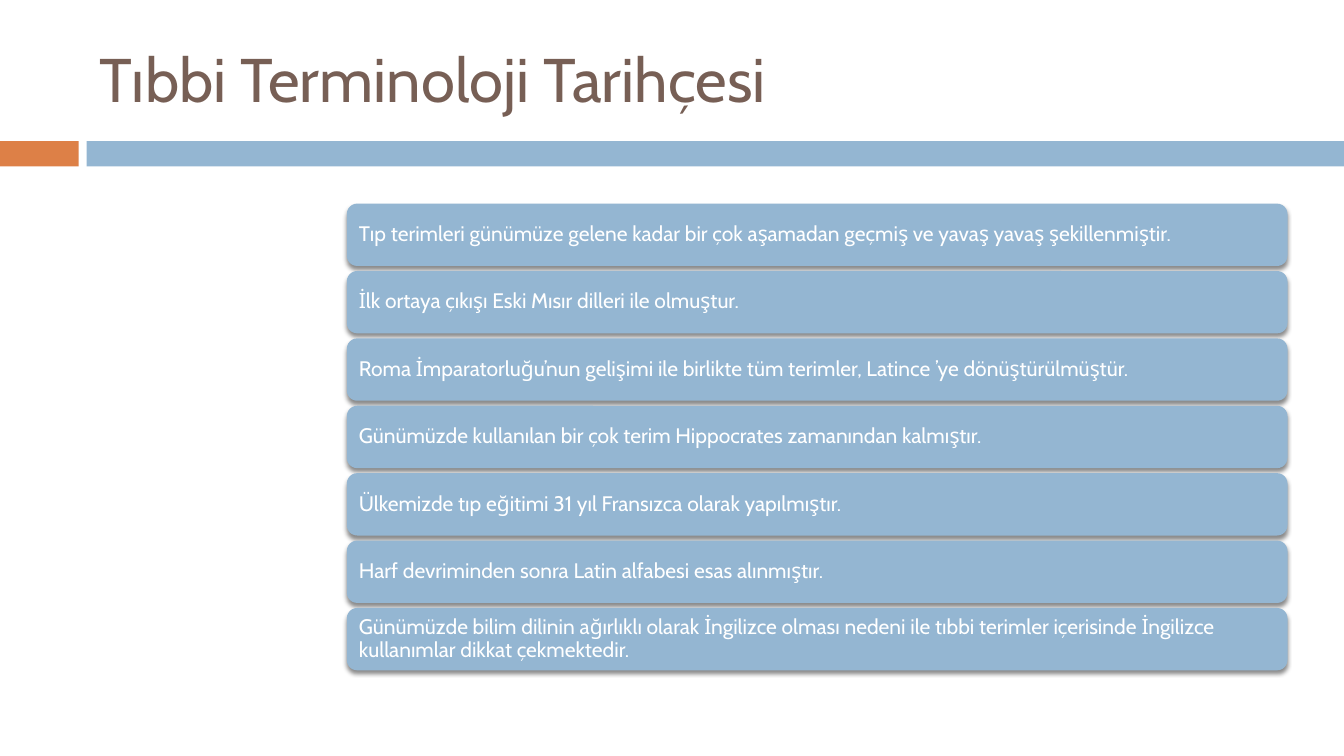
import pptx
import pptx.dml.color
import pptx.enum.shapes
import pptx.enum.text
import pptx.oxml
import pptx.oxml.ns
import pptx.util

Inches = pptx.util.Inches
Pt = pptx.util.Pt
SHAPE = pptx.enum.shapes.MSO_SHAPE
COLORS = {"orange": "DD8047", "blue": "94B6D2", "brown": "775F55",
          "white": "FFFFFF", "shadow": "000000"}
TITLE = "Tıbbi Terminoloji Tarihçesi"
HISTORY = [
    "Tıp terimleri günümüze gelene kadar bir çok aşamadan geçmiş ve yavaş yavaş şekillenmiştir.",
    "İlk ortaya çıkışı Eski Mısır dilleri ile olmuştur.",
    "Roma İmparatorluğu’nun gelişimi ile birlikte tüm terimler, Latince ’ye dönüştürülmüştür.",
    "Günümüzde kullanılan bir çok terim Hippocrates zamanından kalmıştır.",
    "Ülkemizde tıp eğitimi 31 yıl Fransızca olarak yapılmıştır.",
    "Harf devriminden sonra Latin alfabesi esas alınmıştır.",
    "Günümüzde bilim dilinin ağırlıklı olarak İngilizce olması nedeni ile tıbbi terimler "
    "içerisinde İngilizce kullanımlar dikkat çekmektedir.",
]


def rgb(name):
    return pptx.dml.color.RGBColor.from_string(COLORS[name])


def set_all(obj, values):
    for name, value in values.items():
        setattr(obj, name, value)


def add_block(s, kind, x, y, w, h, color):
    sp = s.shapes.add_shape(kind, Inches(x), Inches(y), Inches(w), Inches(h))
    sp.shadow.inherit = False
    sp.fill.solid()
    sp.fill.fore_color.rgb = rgb(color)
    sp.line.fill.background()
    return sp


def add_shadow(sp):
    effects = sp._element.spPr.find(pptx.oxml.ns.qn("a:effectLst"))
    effects.append(pptx.oxml.parse_xml(
        f'<a:outerShdw {pptx.oxml.ns.nsdecls("a")} blurRad="{Pt(3)}" dist="{Pt(2.4)}" '
        f'dir="5400000" rotWithShape="0"><a:srgbClr val="{COLORS["shadow"]}">'
        '<a:alpha val="45000"/></a:srgbClr></a:outerShdw>'))


def write(sp, text, size, color, frame=None, paragraph=None):
    tf = sp.text_frame
    set_all(tf, {"word_wrap": True,
                 "vertical_anchor": pptx.enum.text.MSO_ANCHOR.MIDDLE, **(frame or {})})
    p = tf.paragraphs[0]
    set_all(p, {"alignment": pptx.enum.text.PP_ALIGN.LEFT, **(paragraph or {})})
    r = p.add_run()
    r.text = text
    set_all(r.font, {"name": "Cabin", "size": Pt(size)})
    r.font.color.rgb = rgb(color)


def add_band(s, x, y, w, h, accent=0.78, gap=0.08):
    add_block(s, SHAPE.RECTANGLE, x, y, accent, h, "orange")
    start = accent + gap
    add_block(s, SHAPE.RECTANGLE, x + start, y, w - start, h, "blue")


def add_title(s, x, y, w, h):
    sp = s.shapes.add_textbox(Inches(x), Inches(y), Inches(w), Inches(h))
    write(sp, TITLE, 44, "brown")


def add_history(s, x, y, w, h, gap=0.05):
    bar_h = (h - gap * (len(HISTORY) - 1)) / len(HISTORY)
    margins = dict.fromkeys(
        ["margin_left", "margin_right", "margin_top", "margin_bottom"], Inches(0.09))
    for i, text in enumerate(HISTORY):
        sp = add_block(s, SHAPE.ROUNDED_RECTANGLE, x, y + i * (bar_h + gap), w, bar_h, "blue")
        add_shadow(sp)
        write(sp, text, 15, "white", margins, {"line_spacing": 0.9})


def main():
    prs = pptx.Presentation()
    set_all(prs, {"slide_width": Inches(13.33), "slide_height": Inches(7.5)})
    s = prs.slides.add_slide(prs.slide_layouts[6])
    add_band(s, 0, 1.4, 13.33, 0.25)
    add_title(s, 0.89, 0.3, 11.78, 0.95)
    add_history(s, 3.44, 2.02, 9.33, 4.63)
    prs.save("out.pptx")


if __name__ == "__main__":
    main()
